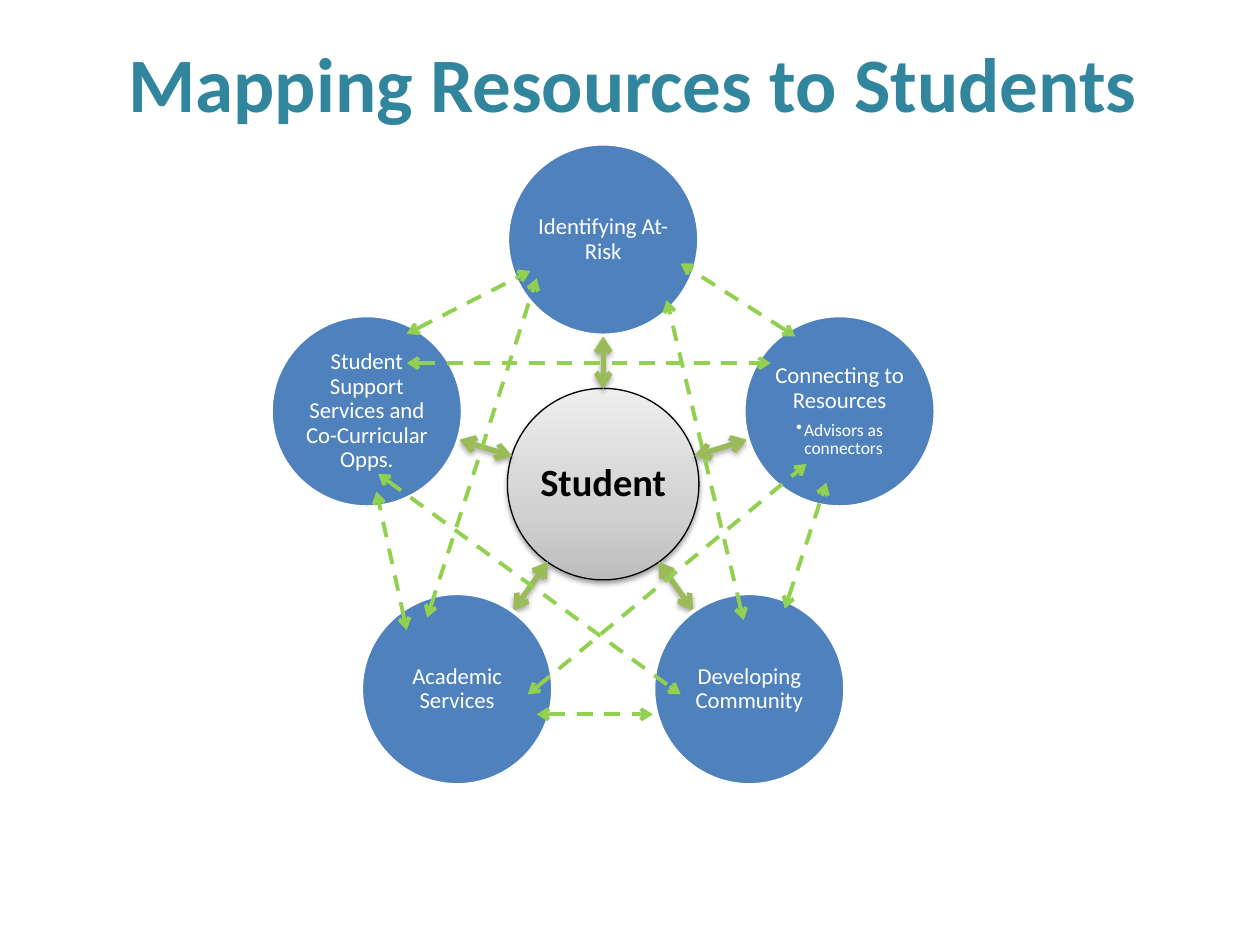
from copy import deepcopy
from math import cos, dist, pi, sin

from pptx import Presentation
from pptx.dml.color import RGBColor
from pptx.enum.dml import MSO_LINE
from pptx.enum.shapes import MSO_CONNECTOR, MSO_SHAPE
from pptx.enum.text import MSO_ANCHOR, PP_ALIGN
from pptx.oxml import parse_xml
from pptx.oxml.ns import nsdecls, qn
from pptx.oxml.xmlchemy import OxmlElement
from pptx.util import Cm, Pt

FONT = "Calibri"
HUB = (12.16, 9.76)
RING_CENTRE = (12.16, 9.84)
RING_RADIUS = 5.01
DIAMETER = 3.86
SPOKE_START = 1.92
SPOKE_GAP = 1.95

RESOURCES = [
    ("Identifying At- Risk", None),
    ("Connecting to Resources", "Advisors as connectors"),
    ("Developing Community", None),
    ("Academic Services", None),
    ("Student Support Services and Co-Curricular Opps.", None),
]

RESOURCE_LINKS = [
    ((8.61, 12.45), (10.82, 5.61)),
    ((14.99, 12.5), (13.44, 6.05)),
    ((10.82, 14.4), (13.16, 14.4)),
    ((8.2, 12.7), (7.59, 9.91)),
    ((8.2, 6.73), (10.69, 5.46)),
    ((16.03, 6.78), (13.72, 5.31)),
    ((15.82, 12.27), (16.66, 9.73)),
    ((8.2, 7.32), (15.54, 7.32)),
    ((10.64, 14), (16.26, 9.35)),
    ((7.62, 9.55), (13.72, 14)),
]


def rgb(value):
    """Turn a hex string into a colour."""
    return RGBColor.from_string(value)


def shadow_effect(opacity):
    """Return a soft shadow that falls straight down."""
    return parse_xml(
        f'<a:outerShdw {nsdecls("a")} blurRad="39370" dist="21590" dir="5400000" rotWithShape="0">'
        f'<a:srgbClr val="000000"><a:alpha val="{opacity * 1000}"/></a:srgbClr></a:outerShdw>'
    )


def format_paragraph(paragraph, size, color, space_after, bold=False):
    """Apply the diagram's text style to a paragraph."""
    paragraph.alignment = PP_ALIGN.CENTER
    paragraph.line_spacing = 0.9
    paragraph.space_after = Pt(space_after)
    paragraph.font.name = FONT
    paragraph.font.size = Pt(size)
    paragraph.font.bold = bold
    paragraph.font.color.rgb = rgb(color)


def add_bullet(paragraph):
    """Give a paragraph a narrow hanging bullet."""
    properties = paragraph._p.get_or_add_pPr()
    properties.set("marL", str(Cm(0.16)))
    properties.set("indent", str(-Cm(0.16)))
    bullet = OxmlElement("a:buChar")
    bullet.set("char", "•")
    properties.append(bullet)


def add_circle(slide, centre, label, inset):
    """Add a labelled circle around a centre point."""
    left, top = (Cm(value - DIAMETER / 2) for value in centre)
    circle = slide.shapes.add_shape(MSO_SHAPE.OVAL, left, top, Cm(DIAMETER), Cm(DIAMETER))
    circle.shadow.inherit = False
    frame = circle.text_frame
    frame.word_wrap = True
    frame.vertical_anchor = MSO_ANCHOR.MIDDLE
    frame.margin_left = frame.margin_right = Cm(inset)
    frame.margin_top = frame.margin_bottom = Cm(inset)
    frame.text = label
    return circle


def add_hub(slide):
    """Add the shaded student circle in the middle."""
    student = add_circle(slide, HUB, "Student", 0.05)
    student.fill.gradient()
    student.fill.gradient_angle = 90
    properties = student._element.spPr
    stop_list = properties.find(f".//{qn('a:gsLst')}")
    stop_list.append(deepcopy(stop_list[0]))
    shades = [(0, "BDBDBD"), (0.35, "D1D1D1"), (1, "EEEEEE")]
    for stop, (position, shade) in zip(student.fill.gradient_stops, shades):
        stop.position = position
        stop.color.rgb = rgb(shade)
    student.line.color.rgb = rgb("000000")
    student.line.width = Pt(0.75)
    properties.find(qn("a:effectLst")).append(shadow_effect(38))
    format_paragraph(student.text_frame.paragraphs[0], 22, "000000", 7.7, bold=True)


def add_resource(slide, centre, label, detail):
    """Add a blue resource circle with an optional bulleted detail."""
    resource = add_circle(slide, centre, label, 0.03)
    resource.fill.solid()
    resource.fill.fore_color.rgb = rgb("4F81BD")
    resource.line.color.rgb = rgb("FFFFFF")
    resource.line.width = Pt(2)
    frame = resource.text_frame
    format_paragraph(frame.paragraphs[0], 13, "FFFFFF", 4.55)
    if detail:
        advice = frame.add_paragraph()
        advice.text = detail
        advice.level = 1
        add_bullet(advice)
        format_paragraph(advice, 10, "FFFFFF", 1.5)


def add_double_arrow(slide, start, end, color, width, dash=None, shadow=None):
    """Add a straight line with an open arrowhead at each end."""
    arrow = slide.shapes.add_connector(
        MSO_CONNECTOR.STRAIGHT, *(Cm(value) for value in (*start, *end))
    )
    arrow.line.color.rgb = rgb(color)
    arrow.line.width = Pt(width)
    if dash:
        arrow.line.dash_style = dash
    properties = arrow._element.spPr
    for tag in ("a:headEnd", "a:tailEnd"):
        head = OxmlElement(tag)
        head.set("type", "arrow")
        properties.find(qn("a:ln")).append(head)
    effects = OxmlElement("a:effectLst")
    if shadow is not None:
        effects.append(shadow)
    properties.append(effects)


def add_spoke(slide, centre):
    """Join the hub to a resource circle."""
    reach = dist(HUB, centre)
    start, end = (
        [hub + (node - hub) * length / reach for hub, node in zip(HUB, centre)]
        for length in (SPOKE_START, reach - SPOKE_GAP)
    )
    add_double_arrow(slide, start, end, "9BBB59", 3, shadow=shadow_effect(35))


def add_title(slide, text):
    """Fill and place the slide title."""
    title = slide.shapes.title
    title.left, title.top, title.width, title.height = Cm(1.63), Cm(0.64), Cm(22.28), Cm(2.03)
    title.text_frame.text = text
    heading = title.text_frame.paragraphs[0]
    heading.alignment = PP_ALIGN.CENTER
    heading.font.name = FONT
    heading.font.size = Pt(44)
    heading.font.bold = True
    heading.font.color.rgb = rgb("31859C")


def main():
    """Build the resource map and save it."""
    presentation = Presentation()
    presentation.slide_width, presentation.slide_height = Cm(25.4), Cm(19.05)
    slide = presentation.slides.add_slide(presentation.slide_layouts[5])
    add_title(slide, "Mapping Resources to Students")
    add_hub(slide)
    for index, (label, detail) in enumerate(RESOURCES):
        angle = 2 * pi * index / len(RESOURCES)
        centre = (
            RING_CENTRE[0] + RING_RADIUS * sin(angle),
            RING_CENTRE[1] - RING_RADIUS * cos(angle),
        )
        add_spoke(slide, centre)
        add_resource(slide, centre, label, detail)
    for start, end in RESOURCE_LINKS:
        add_double_arrow(slide, start, end, "92D050", 2.25, dash=MSO_LINE.DASH)
    presentation.save("out.pptx")


if __name__ == "__main__":
    main()
